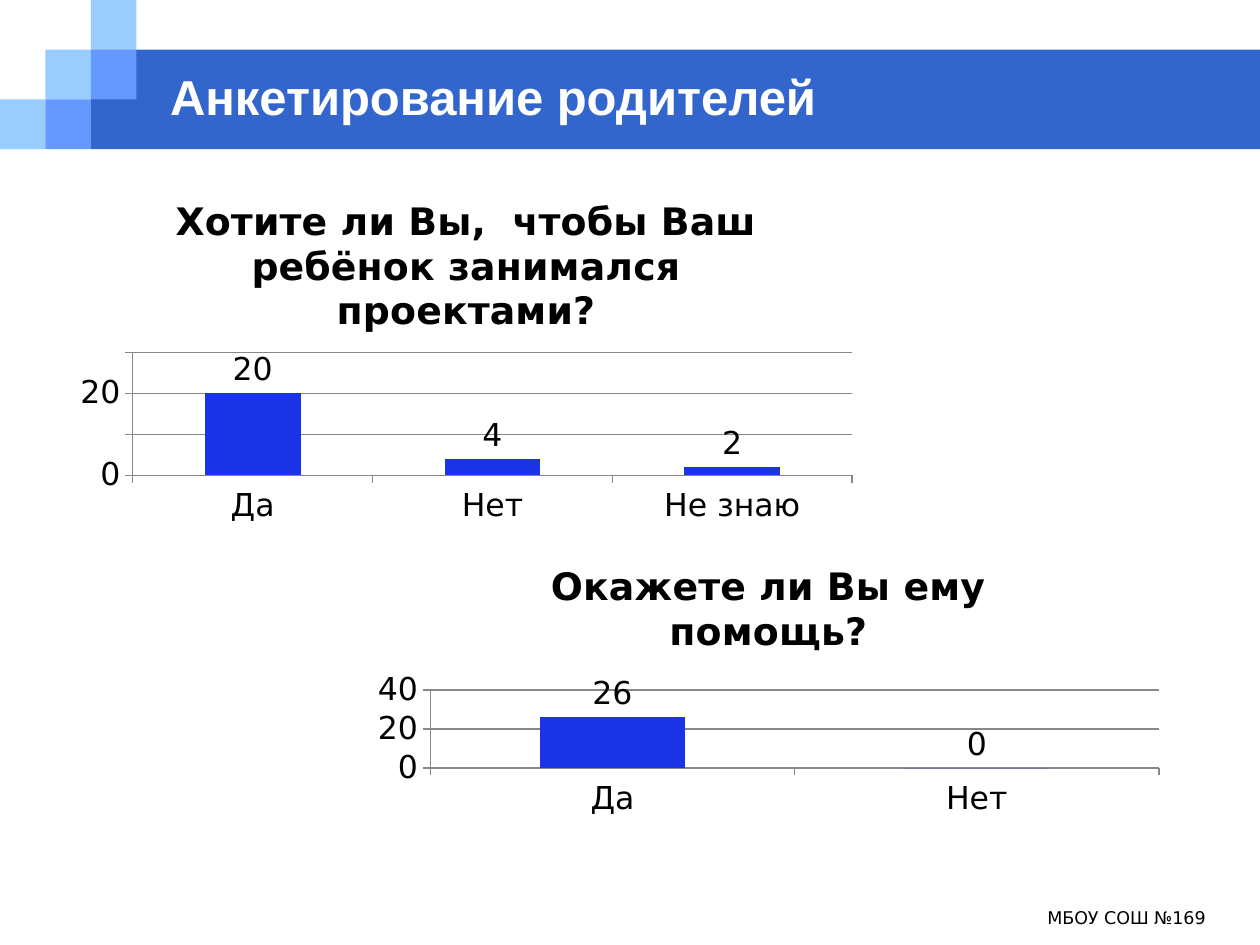
from pptx import Presentation
from pptx.chart.data import CategoryChartData
from pptx.dml.color import RGBColor
from pptx.enum.chart import XL_CHART_TYPE, XL_LABEL_POSITION, XL_TICK_MARK
from pptx.enum.shapes import MSO_SHAPE
from pptx.enum.text import MSO_ANCHOR, PP_ALIGN
from pptx.util import Pt

BANNER_BLUE = RGBColor(0x33, 0x66, 0xCC)
LIGHT_BLUE = RGBColor(0x99, 0xCC, 0xFF)
MID_BLUE = RGBColor(0x66, 0x99, 0xFF)
BAR_BLUE = RGBColor(0x1B, 0x33, 0xE7)
AXIS_GREY = RGBColor(0x87, 0x87, 0x87)
BLACK = RGBColor(0, 0, 0)
WHITE = RGBColor(0xFF, 0xFF, 0xFF)

HEADING_FONT = "Arial"
BODY_FONT = "DejaVu Sans"
SLIDE_WIDTH, SLIDE_HEIGHT = 720, 540


def style_font(font, name, size, color, bold=False):
    font.name = name
    font.size = Pt(size)
    font.bold = bold
    font.color.rgb = color


def add_block(slide, left, top, width, height, color):
    block = slide.shapes.add_shape(
        MSO_SHAPE.RECTANGLE, Pt(left), Pt(top), Pt(width), Pt(height))
    block.shadow.inherit = False
    block.fill.solid()
    block.fill.fore_color.rgb = color
    block.line.fill.background()


def add_header(slide, left, top, width, height):
    """Draw the banner with its stepped squares, a third of the height each."""
    column, row = 26, height / 3
    add_block(slide, left + 2 * column, top + row,
              width - 2 * column, 2 * row, BANNER_BLUE)
    squares = [(0, 2, LIGHT_BLUE), (1, 1, LIGHT_BLUE), (2, 0, LIGHT_BLUE),
               (2, 1, MID_BLUE), (1, 2, MID_BLUE)]
    for column_index, row_index, color in squares:
        add_block(slide, left + column_index * column, top + row_index * row,
                  column, row, color)


def place_title(slide, text, left, top, width, height):
    title = slide.shapes.title
    title.left, title.top = Pt(left), Pt(top)
    title.width, title.height = Pt(width), Pt(height)
    # Bring the title in front of the banner.
    title.element.getparent().append(title.element)
    frame = title.text_frame
    frame.text = text
    frame.vertical_anchor = MSO_ANCHOR.MIDDLE
    paragraph = frame.paragraphs[0]
    paragraph.alignment = PP_ALIGN.LEFT
    style_font(paragraph.font, HEADING_FONT, 28, WHITE, bold=True)


def add_footer(slide, text, left, top, width, height):
    footer = slide.shapes.add_textbox(Pt(left), Pt(top), Pt(width), Pt(height))
    frame = footer.text_frame
    frame.word_wrap = True
    frame.text = text
    paragraph = frame.paragraphs[0]
    paragraph.alignment = PP_ALIGN.RIGHT
    style_font(paragraph.font, BODY_FONT, 10, BLACK)


def add_survey_chart(slide, question, answers, maximum, step,
                     left, top, width, height):
    data = CategoryChartData()
    data.categories = list(answers)
    data.add_series(question, list(answers.values()))
    chart = slide.shapes.add_chart(
        XL_CHART_TYPE.COLUMN_CLUSTERED,
        Pt(left), Pt(top), Pt(width), Pt(height), data).chart
    style_font(chart.font, BODY_FONT, 18, BLACK)
    chart.has_legend = False

    chart.has_title = True
    chart.chart_title.include_in_layout = False
    title_frame = chart.chart_title.text_frame
    title_frame.text = question
    style_font(title_frame.paragraphs[0].font, BODY_FONT, 21.6, BLACK, bold=True)

    value_axis = chart.value_axis
    value_axis.minimum_scale = 0
    value_axis.maximum_scale = maximum
    value_axis.major_unit = step
    value_axis.has_major_gridlines = True
    value_axis.major_gridlines.format.line.color.rgb = AXIS_GREY
    for axis in (value_axis, chart.category_axis):
        axis.major_tick_mark = XL_TICK_MARK.OUTSIDE
        axis.format.line.color.rgb = AXIS_GREY

    plot = chart.plots[0]
    plot.vary_by_categories = False
    plot.gap_width = 150
    fill = plot.series[0].format.fill
    fill.solid()
    fill.fore_color.rgb = BAR_BLUE
    plot.has_data_labels = True
    plot.data_labels.show_value = True
    plot.data_labels.position = XL_LABEL_POSITION.OUTSIDE_END
    style_font(plot.data_labels.font, BODY_FONT, 18, BLACK)


def main():
    presentation = Presentation()
    presentation.slide_width = Pt(SLIDE_WIDTH)
    presentation.slide_height = Pt(SLIDE_HEIGHT)
    slide = presentation.slides.add_slide(presentation.slide_layouts[5])

    add_header(slide, 0, 0, SLIDE_WIDTH, 85.2)
    place_title(slide, "Анкетирование родителей", 90, 36, 582, 38)
    add_footer(slide, "МБОУ СОШ №169", 468, 515, 228, 25)
    add_survey_chart(
        slide, "Хотите ли Вы,  чтобы Ваш ребёнок занимался проектами?",
        {"Да": 20, "Нет": 4, "Не знаю": 2}, 30, 10, 36.7, 100, 459.4, 203.8)
    add_survey_chart(
        slide, "Окажете ли Вы ему помощь?",
        {"Да": 26, "Нет": 0}, 40, 20, 206.6, 309.6, 465, 160.6)

    presentation.save("out.pptx")


if __name__ == "__main__":
    main()
